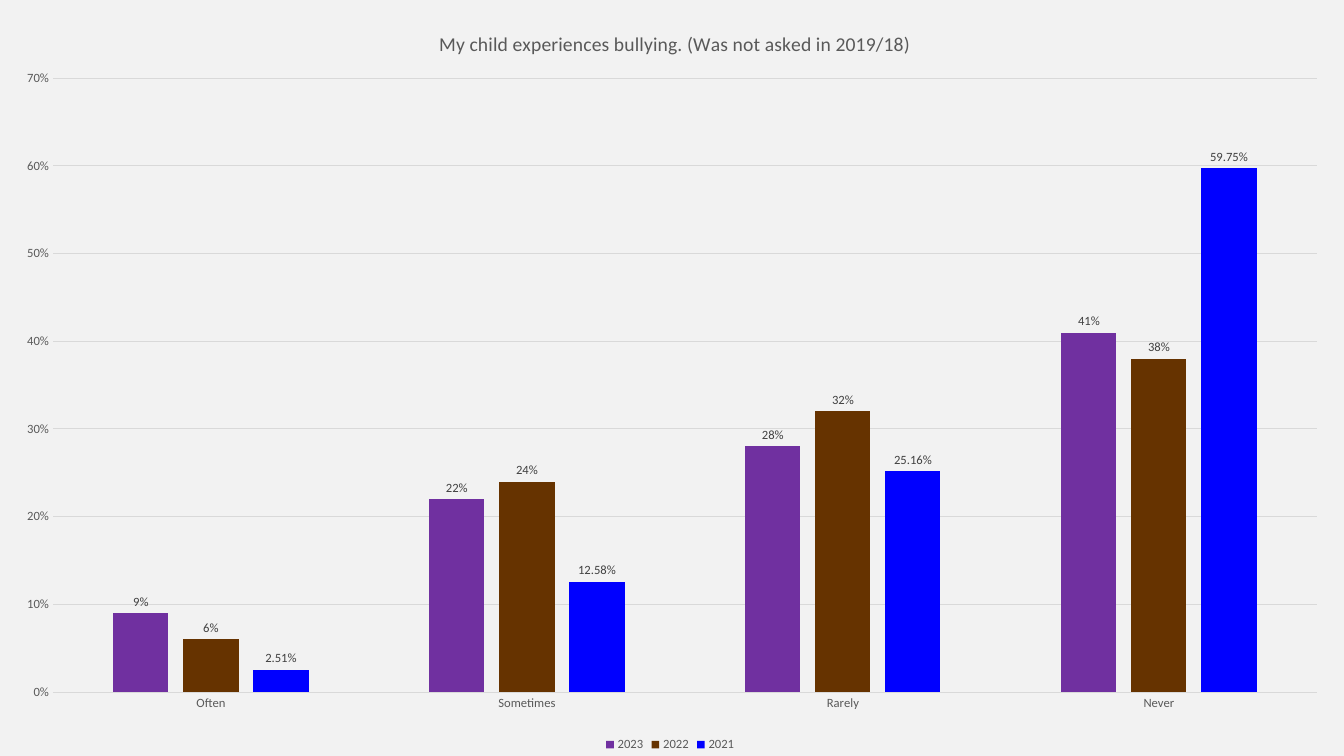
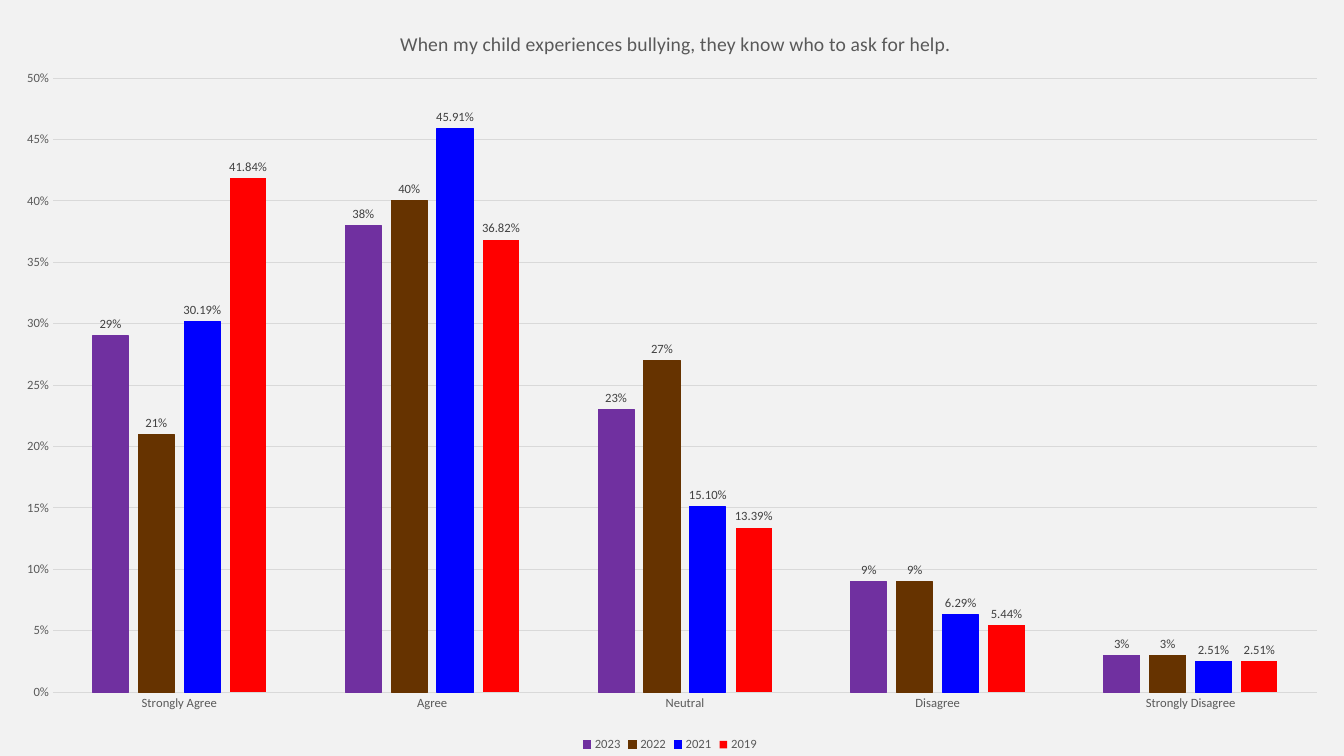
from lxml.etree import SubElement
from pptx import Presentation
from pptx.chart.data import CategoryChartData
from pptx.dml.color import RGBColor
from pptx.enum.chart import XL_CHART_TYPE, XL_LABEL_POSITION, XL_LEGEND_POSITION, XL_TICK_MARK
from pptx.oxml.ns import qn
from pptx.util import Inches, Pt

FONT = "Calibri"
BACK, GRID, GREY, DARK = "F2F2F2", "D9D9D9", "595959", "404040"
YEARS = {"2023": ("7030A0", "0%"), "2022": ("663300", "0%"),
         "2021": ("0000FF", "0.00%"), "2019": ("FF0000", "0.00%")}


def rgb(value):
    """Turn a hex string into a colour."""
    return RGBColor.from_string(value)


def set_font(font, size, color):
    """Give a font the deck's typeface, a size and a colour."""
    font.name, font.size, font.bold = FONT, Pt(size), False
    font.color.rgb = rgb(color)


def set_line(line, color):
    """Draw a thin line in one colour."""
    line.color.rgb, line.width = rgb(color), Pt(0.75)


def place(element, before, inner=False, **shares):
    """Place a chart part by shares of the chart's size."""
    for old in element.findall(qn("c:layout")):
        element.remove(old)
    layout = SubElement(element, qn("c:layout"))
    manual = SubElement(layout, qn("c:manualLayout"))
    if inner:
        SubElement(manual, qn("c:layoutTarget")).set("val", "inner")
    for side in ("x", "y"):
        SubElement(manual, qn(f"c:{side}Mode")).set("val", "edge")
    for side, share in shares.items():
        SubElement(manual, qn(f"c:{side}")).set("val", str(share))
    following = element.find(qn(before))
    if following is not None:
        following.addprevious(layout)


def style_title(chart, text, x):
    """Write the question above the plot."""
    chart.has_title = True
    title = chart.chart_title
    title.include_in_layout = False
    p = title.text_frame.paragraphs[0]
    p.text = text
    set_font(p.font, 14, GREY)
    place(title._element, "c:overlay", x=x, y=0.035)


def style_axes(chart, top, step):
    """Style both axes and the gridlines."""
    for axis in (chart.category_axis, chart.value_axis):
        axis.major_tick_mark = axis.minor_tick_mark = XL_TICK_MARK.NONE
        set_font(axis.tick_labels.font, 9, GREY)
    set_line(chart.category_axis.format.line, GRID)
    values = chart.value_axis
    values.minimum_scale, values.maximum_scale, values.major_unit = 0, top, step
    values.format.line.fill.background()
    set_line(values.major_gridlines.format.line, GRID)
    values.tick_labels.number_format = "0%"
    values.tick_labels.number_format_is_linked = False


def style_legend(chart, x):
    """Put the legend at the bottom edge."""
    chart.has_legend = True
    legend = chart.legend
    legend.position, legend.include_in_layout = XL_LEGEND_POSITION.BOTTOM, False
    set_font(legend.font, 9, GREY)
    place(legend._element, "c:overlay", x=x, y=0.97)


def style_series(series, outlined):
    """Colour one year's columns and label them."""
    color, number_format = YEARS[series.name]
    series.format.fill.solid()
    series.format.fill.fore_color.rgb = rgb(color)
    series.invert_if_negative = False
    if outlined:
        set_line(series.format.line, color)
    labels = series.data_labels
    labels.show_value, labels.position = True, XL_LABEL_POSITION.OUTSIDE_END
    labels.number_format, labels.number_format_is_linked = number_format, False
    set_font(labels.font, 9, DARK)


def add_survey_slide(prs, title, categories, answers, top, step, title_x, legend_x, outlined=()):
    """Add a slide filled by a column chart of one survey question."""
    s = prs.slides.add_slide(prs.slide_layouts[6])
    data = CategoryChartData()
    data.categories = categories
    for year, values in answers.items():
        data.add_series(year, values)
    chart = s.shapes.add_chart(XL_CHART_TYPE.COLUMN_CLUSTERED, 0, 0,
                               prs.slide_width, prs.slide_height, data).chart
    set_font(chart.font, 10, "000000")
    style_title(chart, title, title_x)
    style_axes(chart, top, step)
    style_legend(chart, legend_x)
    plot = chart.plots[0]
    plot.gap_width, plot.overlap, plot.vary_by_categories = 219, -27, False
    for series in plot.series:
        style_series(series, series.name in outlined)
    place(chart._chartSpace.chart.plotArea, "c:barChart", inner=True,
          x=0.0394, y=0.1035, w=0.9405, h=0.812)


def main():
    """Build and save the deck."""
    prs = Presentation()
    prs.slide_width, prs.slide_height = Inches(13.33), Inches(7.5)
    fill = prs.slide_master.background.fill
    fill.solid()
    fill.fore_color.rgb = rgb(BACK)
    add_survey_slide(
        prs, "My child experiences bullying. (Was not asked in 2019/18)",
        ["Often", "Sometimes", "Rarely", "Never"],
        {"2023": (0.09, 0.22, 0.28, 0.41),
         "2022": (0.06, 0.24, 0.32, 0.38),
         "2021": (0.0251, 0.1258, 0.2516, 0.5975)},
        top=0.7, step=0.1, title_x=0.324, legend_x=0.448)
    add_survey_slide(
        prs, "When my child experiences bullying, they know who to ask for help.",
        ["Strongly Agree", "Agree", "Neutral", "Disagree", "Strongly Disagree"],
        {"2023": (0.29, 0.38, 0.23, 0.09, 0.03),
         "2022": (0.21, 0.4, 0.27, 0.09, 0.03),
         "2021": (0.3019, 0.4591, 0.151, 0.0629, 0.0251),
         "2019": (0.4184, 0.3682, 0.1339, 0.0544, 0.0251)},
        top=0.5, step=0.05, title_x=0.295, legend_x=0.431,
        outlined=("2023", "2022", "2021"))
    prs.save("out.pptx")


if __name__ == "__main__":
    main()
